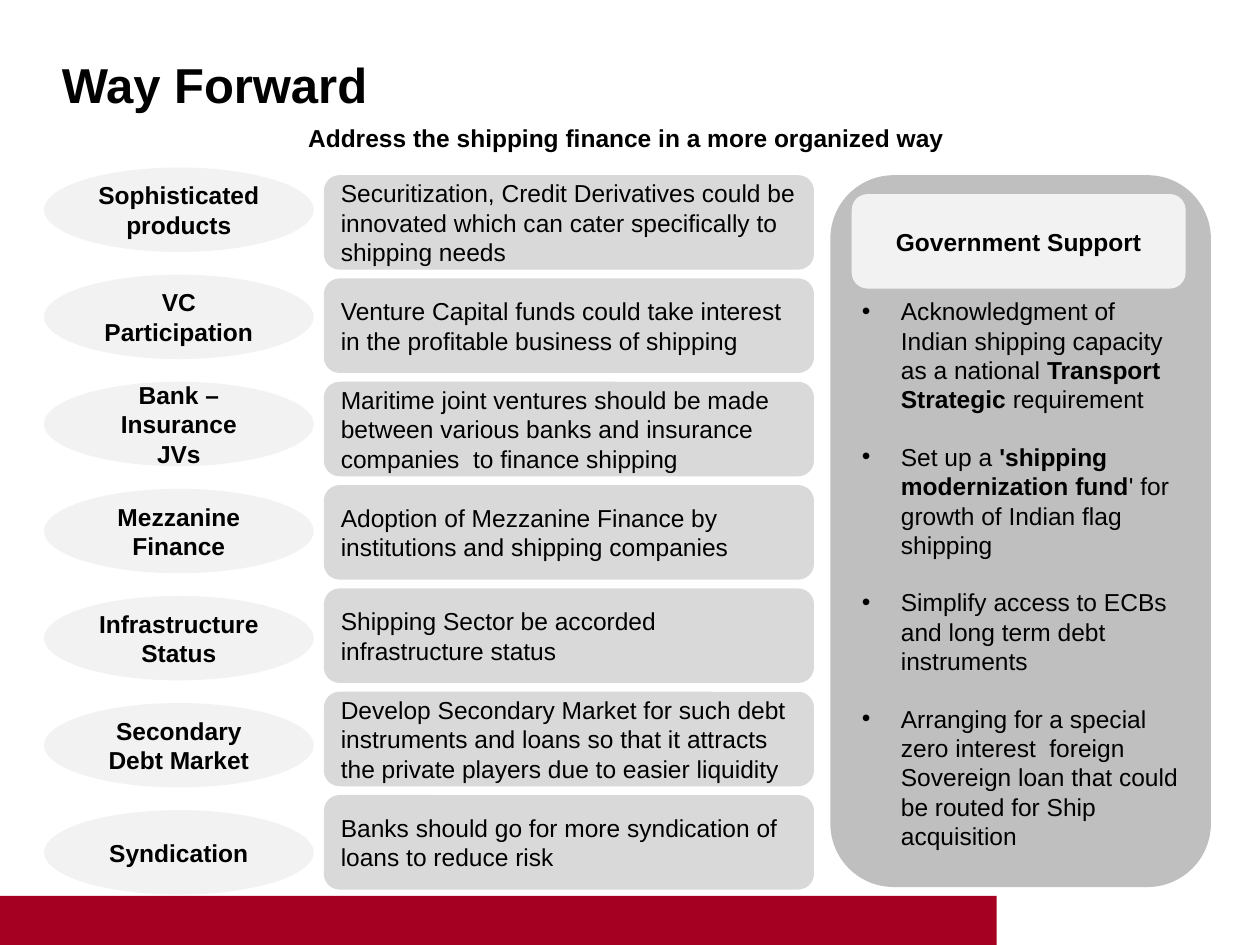
from lxml.etree import SubElement
from pptx import Presentation
from pptx.dml.color import RGBColor as RGB
from pptx.enum.shapes import MSO_SHAPE as Shape
from pptx.enum.text import MSO_ANCHOR as Anchor, MSO_AUTO_SIZE as Fit, PP_ALIGN as Align
from pptx.oxml.ns import qn
from pptx.util import Inches, Pt

# Content
TITLE = "Way Forward"
LEAD = "Address the shipping finance in a more organized way"
ROWS = [
    ("Sophisticated products", "Securitization, Credit Derivatives could be innovated "
     "which can cater specifically to shipping needs"),
    ("VC Participation", "Venture Capital funds could take interest in the "
     "profitable business of shipping"),
    ("Bank – Insurance JVs", "Maritime joint ventures should be made between various "
     "banks and insurance companies  to finance shipping"),
    ("Mezzanine Finance", "Adoption of Mezzanine Finance by institutions and "
     "shipping companies"),
    ("Infrastructure Status", "Shipping Sector be accorded infrastructure status"),
    ("Secondary Debt Market", "Develop Secondary Market for such debt instruments and "
     "loans so that it attracts the private players due to easier liquidity"),
    ("Syndication", "Banks should go for more syndication of loans to reduce risk"),
]
SUPPORT = "Government Support"
# Each point is a list of (text, bold) runs
POINTS = [
    [("Acknowledgment of Indian shipping capacity as a national ", False),
     ("Transport Strategic ", True), ("requirement", False)],
    [("Set up a ", False), ("'shipping modernization fund", True),
     ("' for growth of Indian flag shipping", False)],
    [("Simplify access to ECBs and long term debt instruments", False)],
    [("Arranging for a special zero interest  foreign Sovereign loan that could "
      "be routed for Ship acquisition", False)],
]

# Look
COLORS = {"text": "000000", "bar": "A50021", "pale": "F2F2F2",
          "box": "D9D9D9", "panel": "BFBFBF"}
BODY = {"name": "Arial", "size": Pt(14), "bold": False}
BOLD = {**BODY, "bold": True}
HEAD = {**BOLD, "size": Pt(28)}

# Grid: left, width, height, first top, pitch
LABEL = (0.35, 2.14, 0.67, 1.33, 0.85)
NOTE = (2.57, 3.89, 0.75, 1.39, 0.82)
PANEL = (6.59, 1.39, 3.02, 5.65)

deck = Presentation()
deck.slide_width, deck.slide_height = Inches(10), Inches(7.5)
slide = deck.slides.add_slide(deck.slide_layouts[1])
shapes = slide.shapes


def style(font, form):
    for key, value in form.items():
        setattr(font, key, value)
    font.color.rgb = RGB.from_string(COLORS["text"])


def write(shape, text, form, align):
    frame = shape.text_frame
    frame.word_wrap = True
    frame.auto_size = Fit.NONE
    frame.vertical_anchor = Anchor.MIDDLE
    para = frame.paragraphs[0]
    para.alignment = align
    run = para.add_run()
    run.text = text
    style(run.font, form)


def place(shape, area):
    shape.left, shape.top, shape.width, shape.height = map(Inches, area)


def block(kind, area, color):
    shape = shapes.add_shape(kind, *map(Inches, area))
    shape.shadow.inherit = False
    shape.fill.solid()
    shape.fill.fore_color.rgb = RGB.from_string(COLORS[color])
    shape.line.fill.background()
    return shape


def cell(grid, row):
    left, width, height, top, pitch = grid
    return left, top + row * pitch, width, height


# Footer bar, title and lead line
block(Shape.RECTANGLE, (0, 7.11, 7.91, 0.39), "bar")
place(shapes.title, (0.39, 0.25, 9.17, 0.83))
write(shapes.title, TITLE, HEAD, Align.LEFT)
lead = shapes.add_textbox(*map(Inches, (0.33, 0.78, 9.28, 0.62)))
write(lead, LEAD, BOLD, Align.CENTER)

# Labels and their notes
for row, (label, note) in enumerate(ROWS):
    oval = block(Shape.OVAL, cell(LABEL, row), "pale")
    write(oval, label, BOLD, Align.CENTER)
    box = block(Shape.ROUNDED_RECTANGLE, cell(NOTE, row), "box")
    write(box, note, BODY, Align.LEFT)

# Support panel with its heading
block(Shape.FLOWCHART_ALTERNATE_PROCESS, PANEL, "panel")
head = block(Shape.FLOWCHART_ALTERNATE_PROCESS, (6.76, 1.54, 2.65, 0.75), "pale")
write(head, SUPPORT, BOLD, Align.CENTER)

# Bullet list, brought in front of the panel
body = slide.placeholders[1]
shapes._spTree.append(body._element)
place(body, (6.74, 2.3, 2.72, 4.6))
frame = body.text_frame
frame.word_wrap = True
frame.auto_size = Fit.NONE
frame.vertical_anchor = Anchor.TOP
for i, point in enumerate(POINTS):
    para = frame.add_paragraph() if i else frame.paragraphs[0]
    props = para._p.get_or_add_pPr()
    props.set("marL", str(Inches(0.31)))
    props.set("indent", str(-Inches(0.31)))
    SubElement(props, qn("a:buFont")).set("typeface", "Arial")
    SubElement(props, qn("a:buChar")).set("char", "•")
    para.alignment = Align.LEFT
    para.space_before = Pt(16 if i else 0)
    for text, bold in point:
        run = para.add_run()
        run.text = text
        style(run.font, BOLD if bold else BODY)

deck.save("out.pptx")
